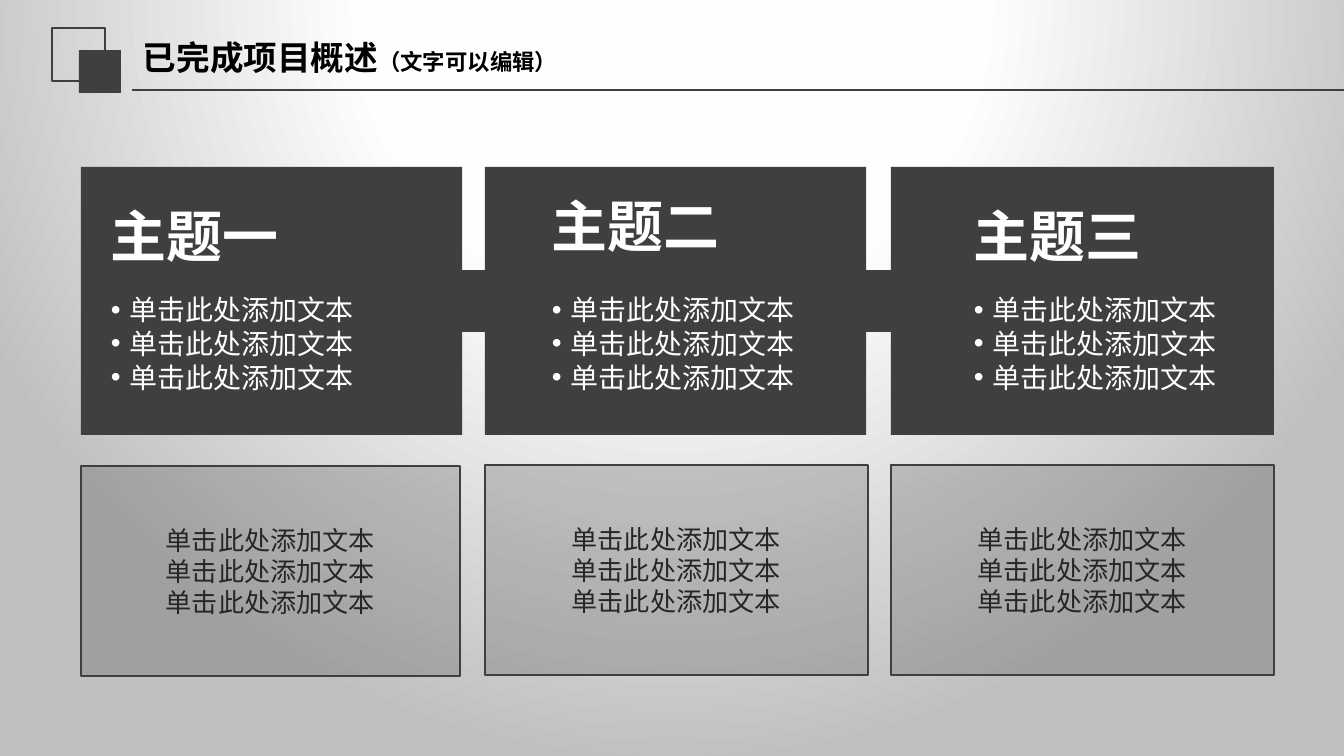
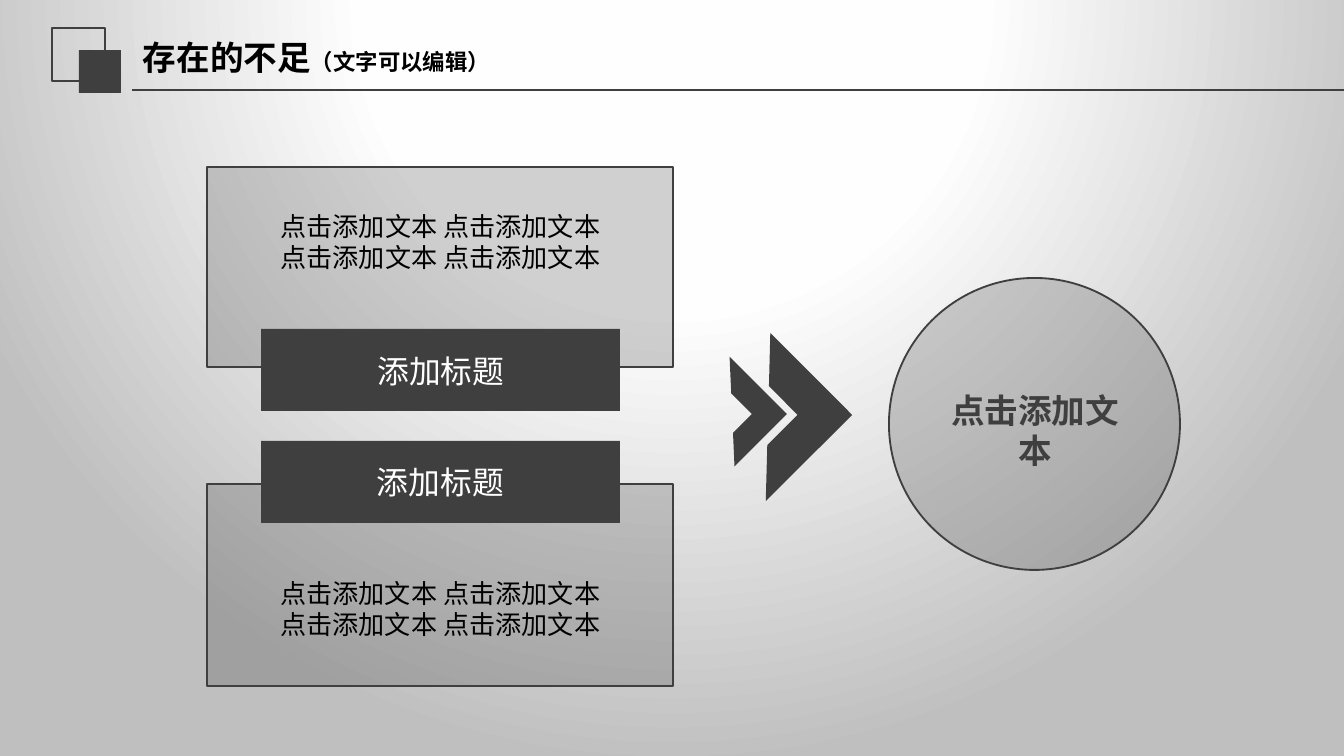
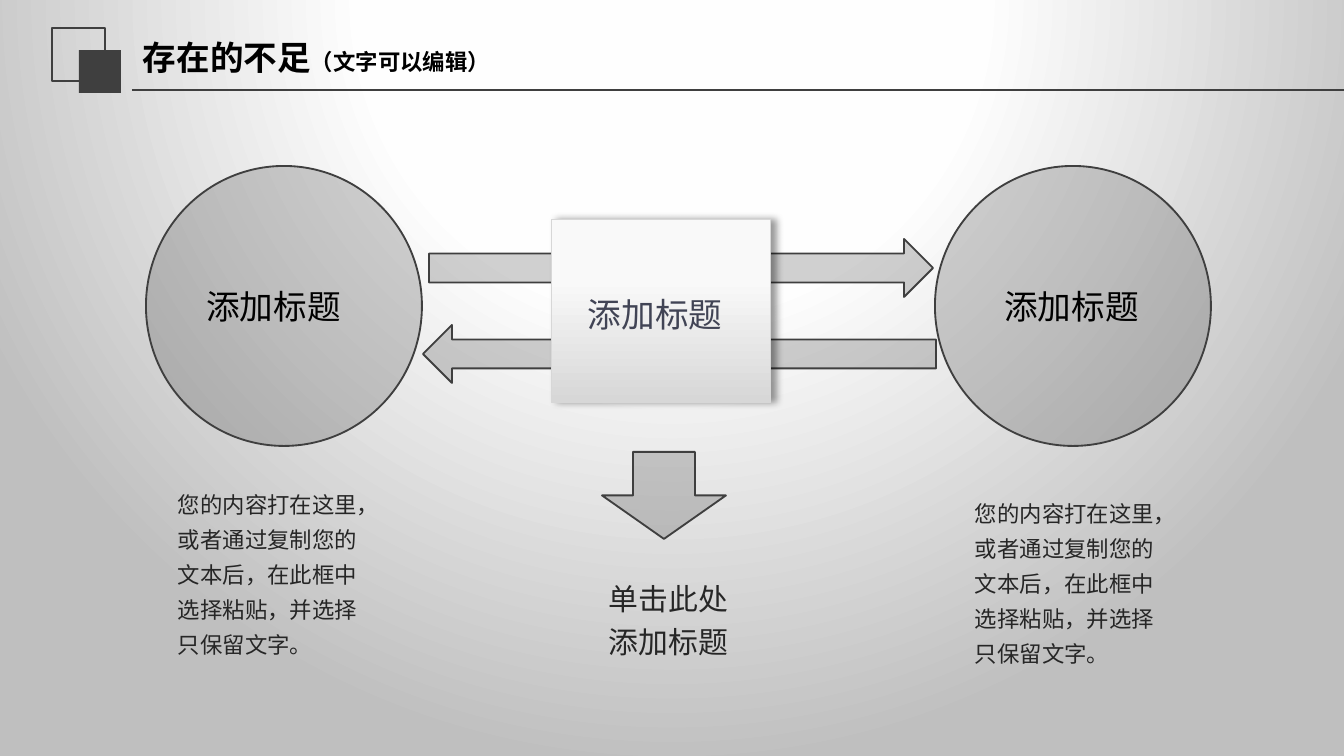
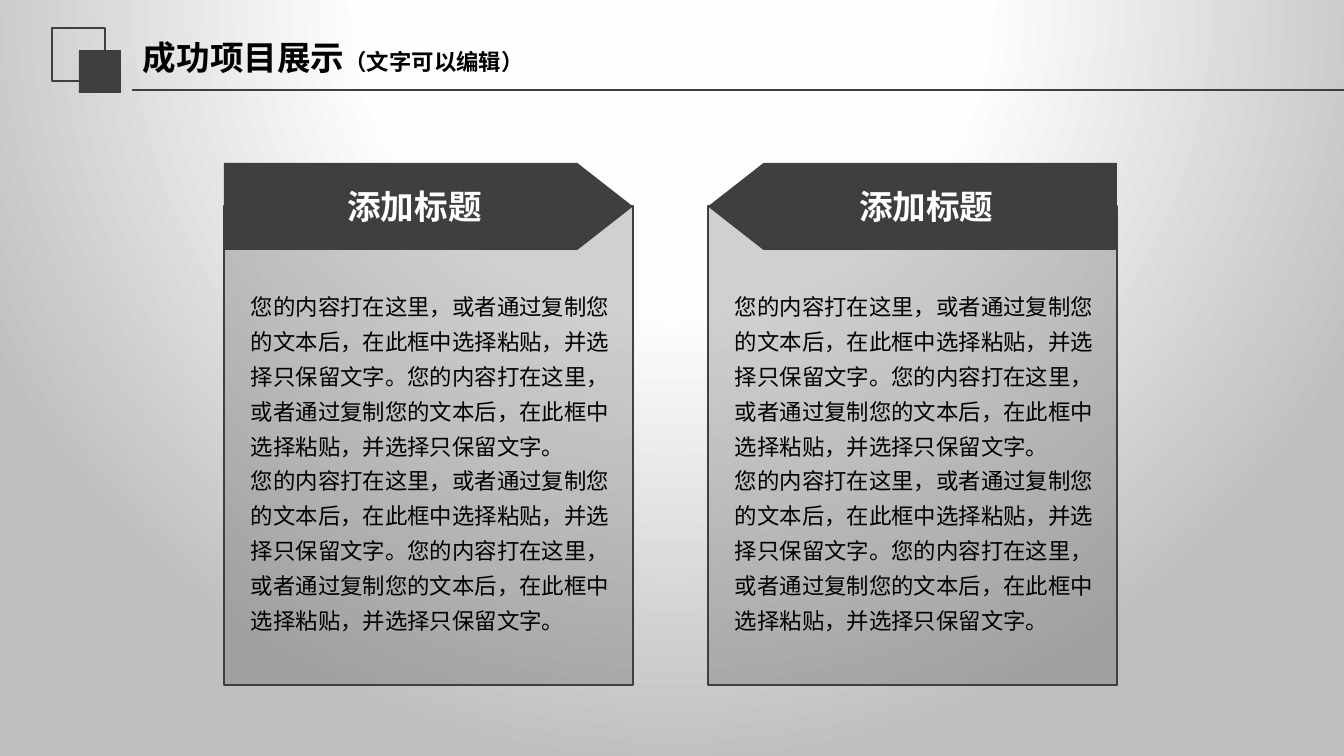
from dataclasses import dataclass
from lxml.etree import SubElement
from pptx import Presentation
from pptx.dml.color import RGBColor
from pptx.enum.lang import MSO_LANGUAGE_ID as Lang
from pptx.enum.shapes import MSO_CONNECTOR, MSO_SHAPE as Preset
from pptx.enum.text import MSO_ANCHOR as Anchor, MSO_AUTO_SIZE as AutoSize, PP_ALIGN as Align
from pptx.oxml.ns import qn
from pptx.util import Emu, Pt


@dataclass(frozen=True)
class Theme:
    dark: str = "3F3F3F"
    ink: str = "262626"
    black: str = "000000"
    white: str = "FFFFFF"
    slate: str = "414455"
    edge: str = "D7D7D7"
    backdrop: tuple = ((0, "FFFFFF"), (40, "FEFEFE"), (100, "BFBFBF"))
    hub: tuple = ((33, "F9F9F9"), (100, "D7D7D7"))
    panel_opacity: int = 24
    cjk: str = "Noto Sans CJK SC"
    title_font: str = "Calibri"
    topic_font: str = "Arial"
    topic_size: int = 30
    title_size: int = 18
    label_size: int = 17
    caption_size: int = 16
    bullet_size: int = 15
    note_size: int = 14
    body_size: int = 12


THEME = Theme()
SCALE = 914400 / 134.4
WIDTH, HEIGHT = 1344, 756
INSETS = (13, 7, 13, 7)
WIDE_INSETS = (15, 7, 15, 7)
SLIM_INSETS = (10, 5, 10, 5)

TITLE_HINT = "（文字可以编辑）"
TITLES = ["已完成项目概述", "存在的不足", "存在的不足", "成功项目展示"]

TOPIC_LINES = ["单击此处添加文本"] * 3
TOPICS = [
    dict(name="主题一", left=81, text_left=98, name_top=195, note=(466, 379)),
    dict(name="主题二", left=485, text_left=539, name_top=185, note=(465, 383)),
    dict(name="主题三", left=891, text_left=961, name_top=195, note=(465, 383)),
]

GAP_LINES = ["点击添加文本 点击添加文本"] * 2
GAPS = [
    dict(card=(207, 484, 466, 202), text=(224, 570, 433, 77),
         label=(261, 441, 359, 82), label_text=(280, 456, 321, 52)),
    dict(card=(207, 167, 466, 200), text=(212, 203, 457, 77),
         label=(261, 329, 359, 82), label_text=(300, 345, 282, 52)),
]
CHEVRONS = [((695, 371, 74, 81), 135), ((707, 359, 122, 116), 135.1)]
RESULT = "点击添加文本"

HEADING = "添加标题"
PASTE_HINT = "您的内容打在这里，或者通过复制您的文本后，在此框中选择粘贴，并选择只保留文字。"
EXCHANGE_ARROWS = [((429, 239, 504, 58), False), ((423, 325, 513, 58), True)]
SIDES = [
    dict(left=146, indent=20, hint=(163, 476, 228, 195)),
    dict(left=935, indent=29, hint=(960, 485, 228, 195)),
]
CONCLUSION = "单击此处添加标题"

SHOWCASE_LINES = [PASTE_HINT * 2] * 2
SHOWCASES = [(224, False), (708, True)]


def px(value):
    return Emu(round(value * SCALE))


def rgb(code):
    return RGBColor.from_string(code)


def gradient(fill, owner, stops, kind, **attributes):
    fill.gradient()
    grad = owner.xpath(".//a:gradFill")[0]
    for child in list(grad):
        grad.remove(child)
    stop_list = SubElement(grad, qn("a:gsLst"))
    for position, code in stops:
        stop = SubElement(stop_list, qn("a:gs"), pos=str(position * 1000))
        SubElement(stop, qn("a:srgbClr"), val=code)
    return SubElement(grad, qn(f"a:{kind}"), **attributes)


def shape(shapes, preset, box, fill=None, opacity=None, line=None, line_width=1, flip=False, adjust=()):
    part = shapes.add_shape(preset, *map(px, box))
    part.shadow.inherit = False
    for index, value in enumerate(adjust):
        part.adjustments[index] = value
    if fill:
        part.fill.solid()
        part.fill.fore_color.rgb = rgb(fill)
    else:
        part.fill.background()
    if opacity:
        color = part.element.spPr.xpath("./a:solidFill/a:srgbClr")[0]
        SubElement(color, qn("a:alpha"), val=str(opacity * 1000))
    if line:
        part.line.color.rgb = rgb(line)
        part.line.width = Pt(line_width)
    else:
        part.line.fill.background()
    if flip:
        part.element.spPr.xfrm.set("flipH", "1")
    return part


def panel(shapes, preset, box, flip=False):
    return shape(shapes, preset, box, THEME.dark, THEME.panel_opacity, THEME.dark, flip=flip)


def style_run(run, size, color, font, bold):
    run.font.size = Pt(size)
    run.font.color.rgb = rgb(color)
    run.font.bold = bold
    run.font.name = font
    run.font.language_id = Lang.SIMPLIFIED_CHINESE
    SubElement(run.font._element, qn("a:ea"), typeface=THEME.cjk)


def write(part, lines, size, color, font=THEME.cjk, bold=False, align=Align.LEFT, anchor=Anchor.MIDDLE,
          insets=INSETS, spacing=None, wrap=True, bullets=False):
    frame = part.text_frame
    frame.text = "\n".join(lines)
    frame.word_wrap = wrap
    frame.vertical_anchor = anchor
    frame.margin_left, frame.margin_top, frame.margin_right, frame.margin_bottom = map(px, insets)
    for paragraph in frame.paragraphs:
        if bullets:
            props = paragraph._p.get_or_add_pPr()
            props.set("marL", str(px(19)))
            props.set("indent", str(-px(19)))
            SubElement(props, qn("a:buFont"), typeface=THEME.topic_font)
            SubElement(props, qn("a:buChar"), char="•")
        paragraph.alignment = align
        if spacing:
            paragraph.line_spacing = spacing
        for run in paragraph.runs:
            style_run(run, size, color, font, bold)


def text_box(shapes, box, lines, size, color, anchor=Anchor.TOP, grow=True, **options):
    part = shapes.add_textbox(*map(px, box))
    write(part, lines, size, color, anchor=anchor, **options)
    part.text_frame.auto_size = AutoSize.SHAPE_TO_FIT_TEXT if grow else AutoSize.NONE
    return part


def add_slide(deck, title):
    shapes = deck.slides.add_slide(deck.slide_layouts[6]).shapes
    shape(shapes, Preset.RECTANGLE, (52, 28, 53, 53), line=THEME.dark, line_width=0.75)
    shape(shapes, Preset.RECTANGLE, (79, 50, 42, 43), THEME.dark)
    rule = shapes.add_connector(MSO_CONNECTOR.STRAIGHT, px(132), px(90), px(WIDTH), px(90))
    rule.line.color.rgb = rgb(THEME.dark)
    rule.line.width = Pt(1.25)
    SubElement(rule.element.spPr, qn("a:effectLst"))
    heading = text_box(shapes, (130, 28, 478, 58), [title], THEME.title_size, THEME.black,
                       Anchor.MIDDLE, grow=False, font=THEME.title_font, bold=True)
    hint = heading.text_frame.paragraphs[0].add_run()
    hint.text = TITLE_HINT
    style_run(hint, THEME.body_size, THEME.black, THEME.title_font, True)
    return shapes


def build_overview(shapes):
    for topic in reversed(TOPICS):
        group = shapes.add_group_shape().shapes
        if topic is TOPICS[-1]:
            shape(group, Preset.RECTANGLE, (topic["left"], 167, 383, 268), THEME.dark)
        else:
            shape(group, Preset.RIGHT_ARROW_CALLOUT, (topic["left"], 167, 450, 268), THEME.dark,
                  adjust=(0.23, 0.25, 0.127, 0.847))
        text_box(group, (topic["text_left"], 286, 356, 116), TOPIC_LINES, THEME.bullet_size,
                 THEME.white, font=THEME.topic_font, bullets=True)
        text_box(group, (topic["text_left"], topic["name_top"], 356, 81), [topic["name"]],
                 THEME.topic_size, THEME.white, font=THEME.topic_font, bold=True)
    for topic in TOPICS:
        top, width = topic["note"]
        note = panel(shapes, Preset.RECTANGLE, (topic["left"], top, width, 210))
        write(note, TOPIC_LINES, THEME.note_size, THEME.ink, align=Align.CENTER)


def build_gaps(shapes):
    for gap in GAPS:
        panel(shapes, Preset.RECTANGLE, gap["card"])
        text_box(shapes, gap["text"], GAP_LINES, THEME.note_size, THEME.black, align=Align.CENTER)
    for gap in GAPS:
        group = shapes.add_group_shape().shapes
        shape(group, Preset.RECTANGLE, gap["label"], THEME.dark)
        text_box(group, gap["label_text"], [HEADING], THEME.label_size, THEME.white,
                 Anchor.MIDDLE, align=Align.CENTER)
    for box, angle in CHEVRONS:
        shape(shapes, Preset.HALF_FRAME, box, THEME.dark).rotation = angle
    group = shapes.add_group_shape().shapes
    panel(group, Preset.OVAL, (889, 278, 291, 292))
    text_box(group, (922, 367, 226, 126), [RESULT], THEME.title_size, THEME.dark,
             Anchor.MIDDLE, grow=False, align=Align.CENTER, bold=True)


def build_exchange(shapes):
    for box, flip in EXCHANGE_ARROWS:
        panel(shapes, Preset.RIGHT_ARROW, box, flip)
    for side in SIDES:
        circle = panel(shapes, Preset.OVAL, (side["left"], 166, 276, 280))
        write(circle, [HEADING], THEME.title_size, THEME.black, THEME.title_font,
              insets=(side["indent"], 7, 13, 7))
    hub = shape(shapes, Preset.RECTANGLE, (551, 219, 219, 183), line=THEME.edge, line_width=0.25)
    gradient(hub.fill, hub.element.spPr, THEME.hub, "lin", ang="5400000", scaled="0")
    effects = hub.element.spPr.find(qn("a:effectLst"))
    shadow = SubElement(effects, qn("a:outerShdw"), blurRad=str(Pt(4)), dist=str(Pt(3)), dir="0")
    shadow_color = SubElement(shadow, qn("a:srgbClr"), val=THEME.black)
    SubElement(shadow_color, qn("a:alpha"), val="40000")
    write(hub, [HEADING], THEME.title_size, THEME.slate, insets=(37, 7, 15, 7), spacing=1.2)
    panel(shapes, Preset.DOWN_ARROW, (602, 452, 124, 87))
    for side in SIDES:
        text_box(shapes, side["hint"], [PASTE_HINT], THEME.body_size, THEME.ink,
                 insets=WIDE_INSETS, spacing=1.3)
    text_box(shapes, (594, 567, 173, 101), [CONCLUSION], THEME.caption_size, THEME.ink,
             insets=WIDE_INSETS, spacing=1.2)


def build_showcase(shapes):
    for left, flip in SHOWCASES:
        panel(shapes, Preset.RECTANGLE, (left, 206, 409, 479))
        banner = shape(shapes, Preset.PENTAGON, (left, 163, 409, 87), THEME.dark, flip=flip, adjust=(0.639,))
        write(banner, [HEADING], THEME.title_size, THEME.white, bold=True, align=Align.CENTER,
              insets=SLIM_INSETS, wrap=False)
        text_box(shapes, (left + 17, 280, 392, 363), SHOWCASE_LINES, THEME.body_size, THEME.black,
                 insets=SLIM_INSETS, spacing=1.3)


def main():
    deck = Presentation()
    deck.slide_width, deck.slide_height = px(WIDTH), px(HEIGHT)
    master = deck.slide_master
    glow = gradient(master.background.fill, master.element, THEME.backdrop, "path", path="circle")
    SubElement(glow, qn("a:fillToRect"), l="50000", t="-80000", r="50000", b="180000")
    builders = [build_overview, build_gaps, build_exchange, build_showcase]
    for title, build in zip(TITLES, builders):
        build(add_slide(deck, title))
    deck.save("out.pptx")


if __name__ == "__main__":
    main()
